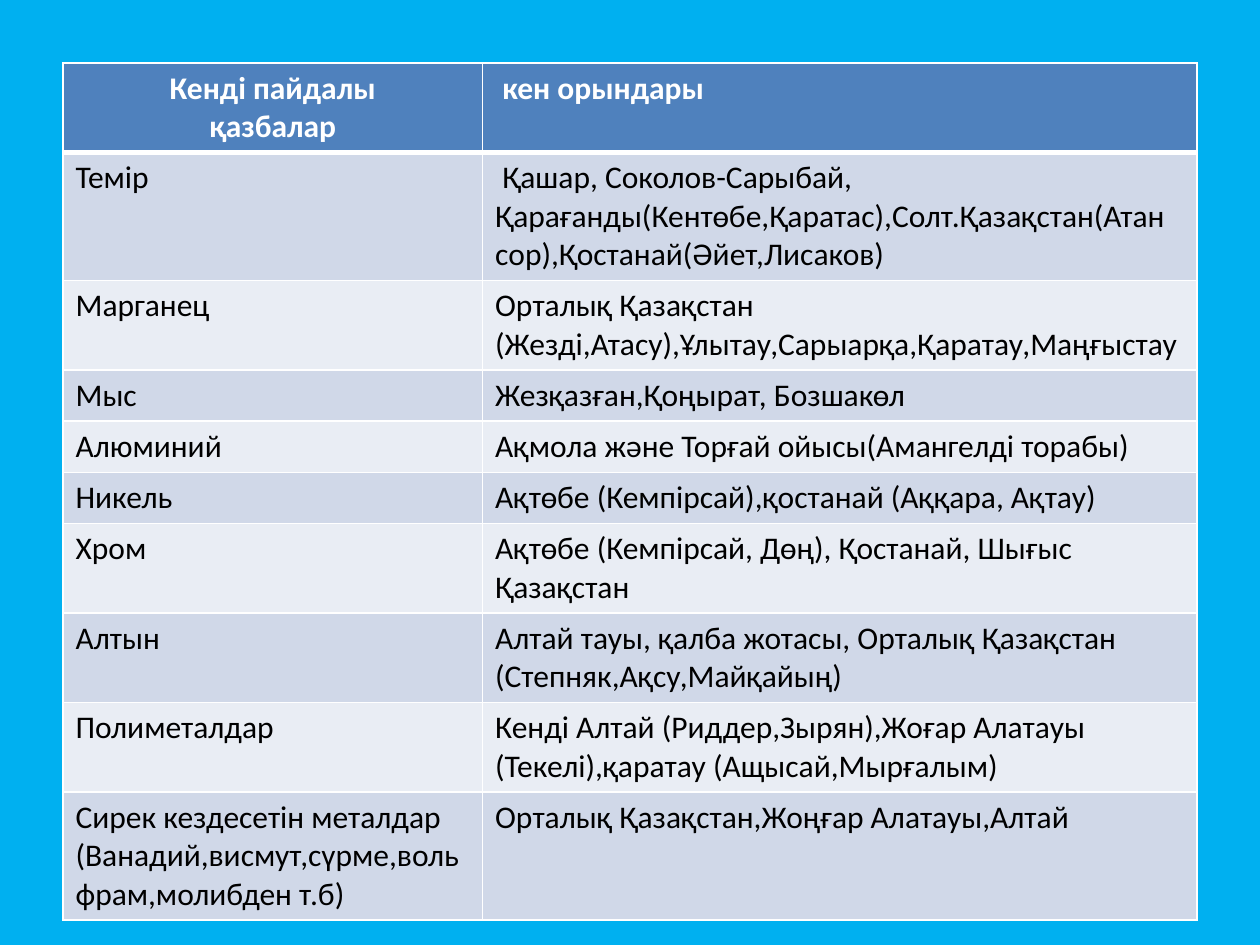
from lxml.etree import SubElement
from pptx import Presentation
from pptx.dml.color import RGBColor
from pptx.enum.text import PP_ALIGN as Align
from pptx.oxml.ns import qn
from pptx.util import Inches, Pt

# Content: mineral, deposits, lines of text in the row
HEAD = ("Кенді пайдалы\vқазбалар", " кен орындары", 2)
ROWS = [
    ("Темір",
     " Қашар, Соколов-Сарыбай, Қарағанды(Кентөбе,Қаратас),Солт.Қазақстан(Атан\n"
     "сор),Қостанай(Әйет,Лисаков)", 3),
    ("Марганец",
     "Орталық Қазақстан (Жезді,Атасу),Ұлытау,Сарыарқа,Қаратау,Маңғыстау", 2),
    ("Мыс", "Жезқазған,Қоңырат, Бозшакөл", 1),
    ("Алюминий", "Ақмола және Торғай ойысы(Амангелді торабы)", 1),
    ("Никель", "Ақтөбе (Кемпірсай),қостанай (Аққара, Ақтау)", 1),
    ("Хром", "Ақтөбе (Кемпірсай, Дөң), Қостанай, Шығыс Қазақстан", 2),
    ("Алтын",
     "Алтай тауы, қалба жотасы, Орталық Қазақстан (Степняк,Ақсу,Майқайың)", 2),
    ("Полиметалдар",
     "Кенді Алтай (Риддер,Зырян),Жоғар Алатауы (Текелі),қаратау (Ащысай,Мырғалым)", 2),
    ("Сирек кездесетін металдар (Ванадий,висмут,сүрме,вольфрам,молибден т.б)",
     "Орталық Қазақстан,Жоңғар Алатауы,Алтай", 3),
]
WIDTHS = (3.33, 5.67)
HEIGHTS = {1: 0.39, 2: 0.69, 3: 0.98}
BANDS = ("D0D8E8", "E9EDF4")
BACK, BLUE, WHITE, BLACK = "00B0F0", "4F81BD", "FFFFFF", "000000"


def paint(fill, color):
    fill.solid()
    fill.fore_color.rgb = RGBColor.from_string(color)


def write(frame, text, color=BLACK, bold=False, align=Align.LEFT, size=18):
    frame.text = text
    for para in frame.paragraphs:
        para.alignment = align
        for run in para.runs:
            font = run.font
            font.name, font.size, font.bold = "Calibri", Pt(size), bold
            paint(font.fill, color)


def border(cell, top=1, bottom=1):
    props = cell._tc.get_or_add_tcPr()
    for side, width in (("L", 1), ("R", 1), ("T", top), ("B", bottom)):
        line = SubElement(props, qn(f"a:ln{side}"), w=str(Pt(width)))
        fill = SubElement(line, qn("a:solidFill"))
        SubElement(fill, qn("a:srgbClr"), val=WHITE)


# Slide
deck = Presentation()
deck.slide_width, deck.slide_height = Inches(10), Inches(7.5)
slide = deck.slides.add_slide(deck.slide_layouts[6])
paint(slide.background.fill, BACK)

# Table grid
data = [HEAD] + ROWS
tall = sum(HEIGHTS[row[-1]] for row in data)
table = slide.shapes.add_table(
    len(data), len(WIDTHS), Inches(0.5), Inches(0.5),
    Inches(sum(WIDTHS)), Inches(tall)).table
for col, width in zip(table.columns, WIDTHS):
    col.width = Inches(width)

# Cells: blue heading, then alternating bands
for r, (*texts, lines) in enumerate(data):
    table.rows[r].height = Inches(HEIGHTS[lines])
    head = r == 0
    for c, text in enumerate(texts):
        cell = table.cell(r, c)
        border(cell, top=3 if r == 1 else 1, bottom=3 if head else 1)
        paint(cell.fill, BLUE if head else BANDS[(r - 1) % 2])
        write(cell.text_frame, text, color=WHITE if head else BLACK, bold=head,
              align=Align.CENTER if head and c == 0 else Align.LEFT)

deck.save("out.pptx")
